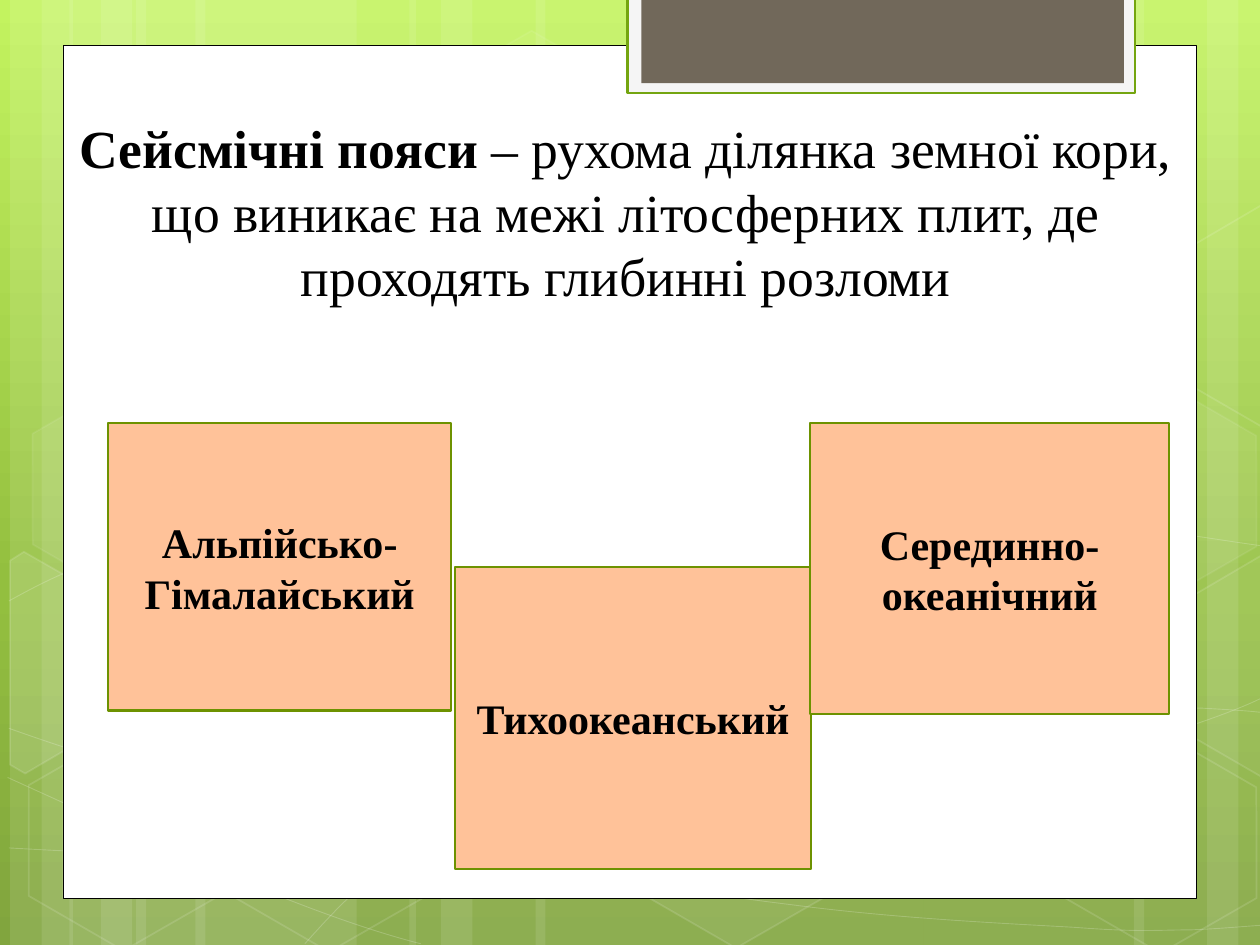
from copy import deepcopy
from dataclasses import dataclass
from typing import Optional

from lxml import etree
from pptx import Presentation
from pptx.dml.color import RGBColor
from pptx.enum.shapes import MSO_SHAPE
from pptx.enum.text import MSO_ANCHOR, PP_ALIGN
from pptx.oxml.ns import qn
from pptx.util import Inches, Pt

RECTANGLE, HEXAGON = MSO_SHAPE.RECTANGLE, MSO_SHAPE.HEXAGON
MIDDLE, BOTTOM, CENTER = MSO_ANCHOR.MIDDLE, MSO_ANCHOR.BOTTOM, PP_ALIGN.CENTER

COLORS = {
    "white": "FFFFFF", "black": "000000", "tab": "F5F5F5", "tab_line": "74A510",
    "brown": "71685A", "peach": "FFC299", "green": "6D9200",
    "sky": "C3F35F", "leaf": "93BF3F", "moss": "81A53E",
}
FONT = "Times New Roman"

# The slide is a grid of 10 columns by 7.5 rows of square cells
COLUMNS, ROWS = 10, 7.5
CELL = Inches(1)


@dataclass(frozen=True)
class Area:
    column: float
    row: float
    columns: float
    rows: float

    def emu(self) -> list[int]:
        return [round(n * CELL) for n in (self.column, self.row, self.columns, self.rows)]


@dataclass(frozen=True)
class Paint:
    fill: Optional[str] = None
    fill_alpha: int = 100
    line: Optional[str] = None
    width: float = 1
    line_alpha: int = 100


@dataclass(frozen=True)
class Belt:
    area: Area
    lines: tuple[str, ...]


def color(name: str) -> RGBColor:
    return RGBColor.from_string(COLORS[name])


def set_alpha(shape, route: str, percent: int) -> None:
    if percent < 100:
        tint = shape._element.spPr.find(f"{route}/{qn('a:srgbClr')}")
        etree.SubElement(tint, qn("a:alpha")).set("val", str(percent * 1000))


def apply_paint(shape, paint: Paint) -> None:
    shape.shadow.inherit = False
    solid = qn("a:solidFill")
    if paint.fill:
        shape.fill.solid()
        shape.fill.fore_color.rgb = color(paint.fill)
        set_alpha(shape, solid, paint.fill_alpha)
    else:
        shape.fill.background()
    if paint.line:
        shape.line.color.rgb = color(paint.line)
        shape.line.width = Pt(paint.width)
        set_alpha(shape, f"{qn('a:ln')}/{solid}", paint.line_alpha)
    else:
        shape.line.fill.background()


def draw_shape(page, kind, area: Area, paint: Paint, rotation: float = 0):
    shape = page.shapes.add_shape(kind, *area.emu())
    shape.rotation = rotation
    apply_paint(shape, paint)
    return shape


def draw_outline(page, points: list, paint: Paint, close: bool):
    spots = [(round(x * CELL), round(y * CELL)) for x, y in points]
    builder = page.shapes.build_freeform(*spots[0], scale=1.0)
    builder.add_line_segments(spots[1:], close=close)
    outline = builder.convert_to_shape()
    apply_paint(outline, paint)
    return outline


def bend(outline) -> None:
    """Join every three straight segments into one cubic curve."""
    segments = list(outline._element.iter(qn("a:lnTo")))
    for first in range(0, len(segments), 3):
        start, *others = segments[first:first + 3]
        start.tag = qn("a:cubicBezTo")
        for segment in others:
            start.append(segment[0])
            segment.getparent().remove(segment)


def add_span(para, text: str, size: float, bold: bool) -> None:
    span = para.add_run()
    span.text = text
    for name, value in {"name": FONT, "size": Pt(size), "bold": bold}.items():
        setattr(span.font, name, value)
    span.font.color.rgb = color("black")


def paint_background(page) -> None:
    fill = page.background.fill
    fill.gradient()
    fill.gradient_angle = 270
    stops = page.element.find(f".//{qn('a:gsLst')}")
    stops.append(deepcopy(stops[-1]))
    for stop, (name, position) in zip(fill.gradient_stops,
                                      (("sky", 0), ("leaf", 0.62), ("moss", 1))):
        stop.color.rgb = color(name)
        stop.position = position


# Backdrop: translucent bands as (column, columns)
BANDS = [(1.08, 1.75), (0.08, 0.5), (0.33, 0.83), (1.55, 1.75), (0.55, 0.5), (0.8, 0.83),
         (7.33, 1.75), (9.58, 0.5), (9, 0.83), (4.25, 3.08), (3.25, 0.5), (3.5, 0.83)]
# Each curve is a start, then three nodes per cubic
CURVES = [
    [(0.07, 6.73), (0.61, 6.76), (1.15, 6.79), (1.9, 6.78), (2.65, 6.77), (3.58, 6.75),
     (4.58, 6.65), (5.58, 6.55), (7, 6.36), (7.92, 6.17), (8.83, 5.98), (9.77, 5.68),
     (10.07, 5.51)],
    [(0.07, 4.77), (0.36, 4.61), (0.65, 4.46), (1.21, 4.31), (1.78, 4.16), (2.59, 3.94),
     (3.47, 3.87), (4.36, 3.8), (5.44, 3.79), (6.54, 3.87), (7.64, 3.95), (9.47, 4.26),
     (10.07, 4.34)],
    [(0.06, 6.17), (1.27, 6.72), (2.47, 7.27), (3.34, 7.49)],
    [(0.07, 5.78), (0.38, 5.89), (0.7, 6), (1.28, 6.16), (1.86, 6.31), (2.73, 6.56),
     (3.57, 6.73), (4.4, 6.9), (5.45, 7.08), (6.28, 7.18), (7.11, 7.29), (8, 7.33),
     (8.53, 7.36), (9.05, 7.4), (9.19, 7.38), (9.45, 7.38), (9.71, 7.37), (9.89, 7.35),
     (10.07, 7.34)],
    [(2.42, 7.49), (2.6, 7.29), (2.78, 7.09), (3.02, 6.91), (3.26, 6.73), (3.6, 6.53),
     (3.88, 6.39), (4.16, 6.25), (4.33, 6.19), (4.7, 6.09), (5.06, 5.99), (5.73, 5.85),
     (6.08, 5.78), (6.44, 5.71), (6.49, 5.71), (6.8, 5.69), (7.11, 5.66), (7.6, 5.63),
     (7.94, 5.62), (8.29, 5.61), (8.86, 5.62), (8.86, 5.62), (9.08, 5.62), (9.31, 5.62),
     (9.53, 5.62), (9.71, 5.63), (9.88, 5.64), (9.97, 5.65), (10.06, 5.66), (10.03, 5.65),
     (10.06, 5.66)],
]
# Hexagons as (column, row, fill alpha, line alpha); zero means no fill
HEXAGONS = [(3.34, 0.36, 4, 8), (4.97, 5.89, 6, 12), (0.11, 5.91, 0, 12),
            (0.14, 3.12, 7, 8), (1.74, 5.92, 0, 12), (7.53, 4.53, 10, 12),
            (8.34, 5.93, 0, 12), (8.34, 3.14, 7, 8)]
# Hexagons cut by the slide's edge, as (fill alpha, corners)
CUT_HEXAGONS = [
    (10, [(0.08, 4.45), (0.19, 4.38), (0.96, 4.82), (0.95, 5.7), (0.2, 6.14), (0.08, 6.07)]),
    (4, [(9.26, 4.85), (10.01, 4.41), (10.09, 4.46), (10.09, 6.13), (10.02, 6.17), (9.26, 5.73)]),
    (0, [(9.26, 2.07), (10.01, 1.63), (10.1, 1.68), (10.09, 3.35), (10.02, 3.39), (9.26, 2.95)]),
]
# White panel and the tab hanging from the top edge
PANELS = [
    (Area(0.5, 0.36, 9, 6.77), Paint("white", line="black", width=0.5)),
    (Area(4.98, -0.02, 4.03, 0.76), Paint("tab", line="tab_line", width=1.25)),
    (Area(5.09, -0.02, 3.83, 0.68), Paint("brown")),
]
TITLE_AREA = Area(0.43, 0.76, 9.07, 1.73)
TITLE = [("Сейсмічні пояси ", True),
         ("– рухома ділянка земної кори, що виникає на межі літосферних плит, "
          "де проходять глибинні розломи", False)]
BELTS = [
    Belt(Area(0.86, 3.36, 2.72, 2.28), ("Альпійсько-Гімалайський",)),
    Belt(Area(3.61, 4.5, 2.83, 2.4), ("Тихоокеанський",)),
    Belt(Area(6.43, 3.36, 2.85, 2.31), ("Серединно-", "океанічний")),
]


def hexagon_paint(fill_alpha: int, line_alpha: int) -> Paint:
    return Paint("white" if fill_alpha else None, fill_alpha, "white", 1, line_alpha)


def draw_backdrop(page) -> None:
    for column, columns in BANDS:
        draw_shape(page, RECTANGLE, Area(column, 0, columns, ROWS), Paint("white", 10))
    for nodes in CURVES:
        bend(draw_outline(page, nodes, Paint(line="white", width=0.5, line_alpha=20),
                          close=False))
    for column, row, fill_alpha, line_alpha in HEXAGONS:
        hexagon = draw_shape(page, HEXAGON, Area(column, row, 1.75, 1.52),
                             hexagon_paint(fill_alpha, line_alpha), rotation=30)
        hexagon.adjustments[0] = 0.29
    for fill_alpha, corners in CUT_HEXAGONS:
        draw_outline(page, corners, hexagon_paint(fill_alpha, 12), close=True)
    for area, paint in PANELS:
        draw_shape(page, RECTANGLE, area, paint)


def draw_title(page) -> None:
    frame = page.shapes.add_textbox(*TITLE_AREA.emu()).text_frame
    frame.word_wrap, frame.vertical_anchor = True, BOTTOM
    para = frame.paragraphs[0]
    para.alignment = CENTER
    for text, bold in TITLE:
        add_span(para, text, 30.6, bold)


def draw_belt(page, belt: Belt) -> None:
    box = draw_shape(page, RECTANGLE, belt.area, Paint("peach", line="green", width=1.25))
    frame = box.text_frame
    frame.word_wrap, frame.vertical_anchor = True, MIDDLE
    for index, line in enumerate(belt.lines):
        para = frame.add_paragraph() if index else frame.paragraphs[0]
        para.alignment = CENTER
        add_span(para, line, 24, True)


def main() -> None:
    deck = Presentation()
    deck.slide_width, deck.slide_height = round(COLUMNS * CELL), round(ROWS * CELL)
    page = deck.slides.add_slide(deck.slide_layouts[6])
    paint_background(page)
    draw_backdrop(page)
    draw_title(page)
    for belt in BELTS:
        draw_belt(page, belt)
    deck.save("out.pptx")


if __name__ == "__main__":
    main()
